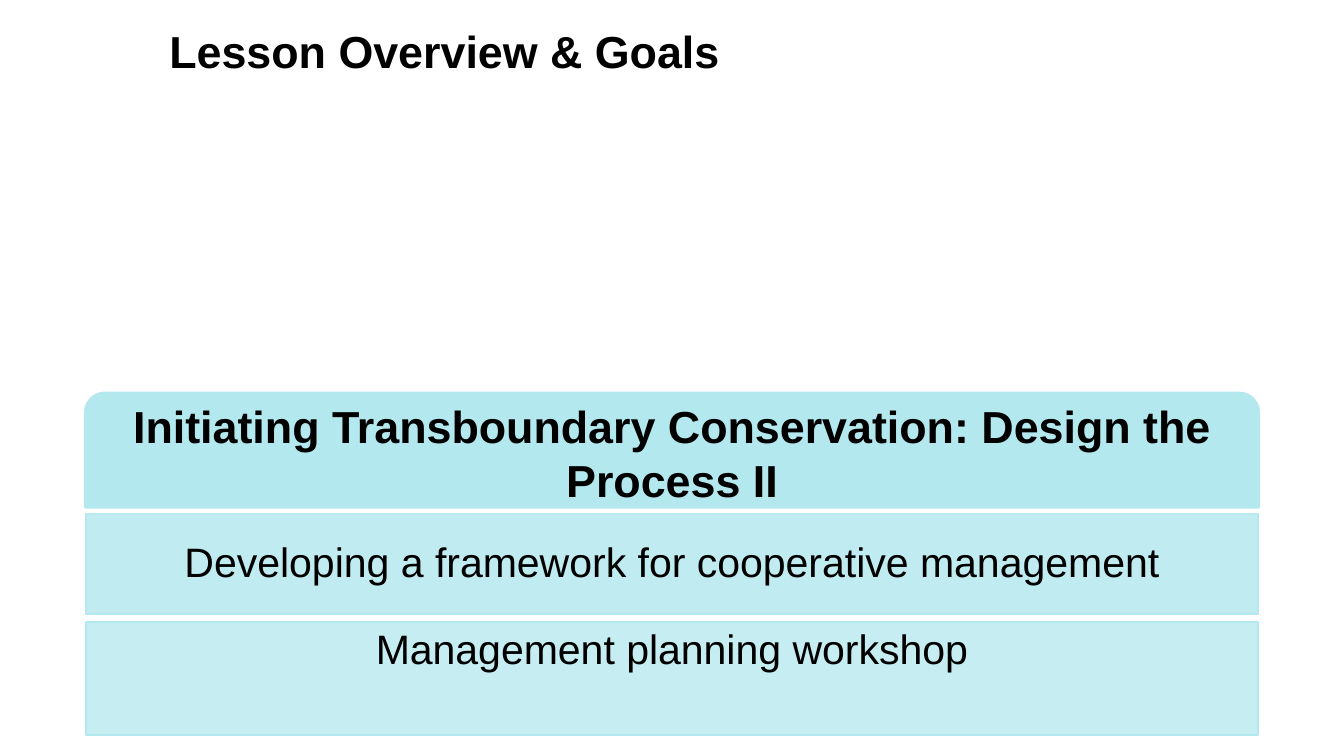
from dataclasses import dataclass

from lxml import etree
from pptx import Presentation
from pptx.dml.color import RGBColor
from pptx.enum.shapes import MSO_SHAPE
from pptx.enum.text import MSO_ANCHOR, MSO_AUTO_SIZE, PP_ALIGN
from pptx.oxml.ns import qn
from pptx.util import Inches, Pt

BLACK = RGBColor(0x00, 0x00, 0x00)
WHITE = RGBColor(0xFF, 0xFF, 0xFF)
AQUA = RGBColor(0xB3, 0xE8, 0xEF)
RECTANGLE = MSO_SHAPE.RECTANGLE
ROUND_TOP = MSO_SHAPE.ROUND_2_SAME_RECTANGLE
TOP, MIDDLE = MSO_ANCHOR.TOP, MSO_ANCHOR.MIDDLE
LEFT, CENTER = PP_ALIGN.LEFT, PP_ALIGN.CENTER
GROW, FIXED = MSO_AUTO_SIZE.SHAPE_TO_FIT_TEXT, MSO_AUTO_SIZE.NONE

FONT = "Arial"
SLIDE_WIDTH = Inches(10)
SLIDE_HEIGHT = SLIDE_WIDTH * 9 // 16
BAR_LEFT, BAR_WIDTH = 0.64, 8.72


@dataclass
class Bar:
    text: str
    top: float
    height: float
    opacity: int = 100
    kind: MSO_SHAPE = RECTANGLE
    line_width: float = 0.75
    size: int = 22
    bold: bool = False
    anchor: MSO_ANCHOR = MIDDLE
    inset: float = 0.05
    line_spacing: float = 0.9


BARS = [
    Bar("Initiating Transboundary Conservation: Design the Process II", 2.93, 0.84,
        kind=ROUND_TOP, line_width=2.25, size=24, bold=True, inset=0.1, line_spacing=1.0),
    Bar("Developing a framework for cooperative management", 3.82, 0.75, opacity=82),
    Bar("Management planning workshop", 4.63, 0.84, opacity=76, anchor=TOP),
]


def fill_shape(shape, color: RGBColor, opacity: int = 100) -> None:
    shape.fill.solid()
    shape.fill.fore_color.rgb = color
    if opacity < 100:
        color_element = shape.element.spPr.find(qn("a:solidFill"))[0]
        etree.SubElement(color_element, qn("a:alpha")).set("val", str(opacity * 1000))


def write_text(shape, text: str, *, size: int, bold: bool = False, align: PP_ALIGN = LEFT,
               anchor: MSO_ANCHOR = MIDDLE, inset: float = 0.05,
               line_spacing: float = 1.0, auto_size: MSO_AUTO_SIZE = FIXED) -> None:
    frame = shape.text_frame
    frame.word_wrap = True
    frame.auto_size = auto_size
    frame.vertical_anchor = anchor
    frame.margin_left = frame.margin_right = Inches(0.1)
    frame.margin_top = frame.margin_bottom = Inches(inset)
    frame.text = text
    paragraph = frame.paragraphs[0]
    paragraph.alignment = align
    paragraph.line_spacing = line_spacing
    font = paragraph.runs[0].font
    font.name, font.size, font.bold = FONT, Pt(size), bold
    font.color.rgb = BLACK


def draw_bar(slide, bar: Bar) -> None:
    shape = slide.shapes.add_shape(bar.kind, Inches(BAR_LEFT), Inches(bar.top),
                                   Inches(BAR_WIDTH), Inches(bar.height))
    shape.shadow.inherit = False
    fill_shape(shape, AQUA, bar.opacity)
    shape.line.color.rgb = AQUA
    shape.line.width = Pt(bar.line_width)
    write_text(shape, bar.text, size=bar.size, bold=bar.bold, align=CENTER,
               anchor=bar.anchor, inset=bar.inset, line_spacing=bar.line_spacing)


def main() -> None:
    presentation = Presentation()
    presentation.slide_width, presentation.slide_height = SLIDE_WIDTH, SLIDE_HEIGHT
    slide = presentation.slides.add_slide(presentation.slide_layouts[5])
    slide.background.fill.solid()
    slide.background.fill.fore_color.rgb = WHITE

    # Lesson heading and its topics
    for bar in BARS:
        draw_bar(slide, bar)

    # Title, in front of the bars
    title = slide.shapes.title
    title.left, title.top = Inches(1.16), Inches(0.13)
    title.width, title.height = Inches(8.84), Inches(0.5)
    fill_shape(title, WHITE, 55)
    write_text(title, "Lesson Overview & Goals", size=24, bold=True, auto_size=GROW)
    slide.shapes.element.append(title.element)

    presentation.save("out.pptx")


if __name__ == "__main__":
    main()
